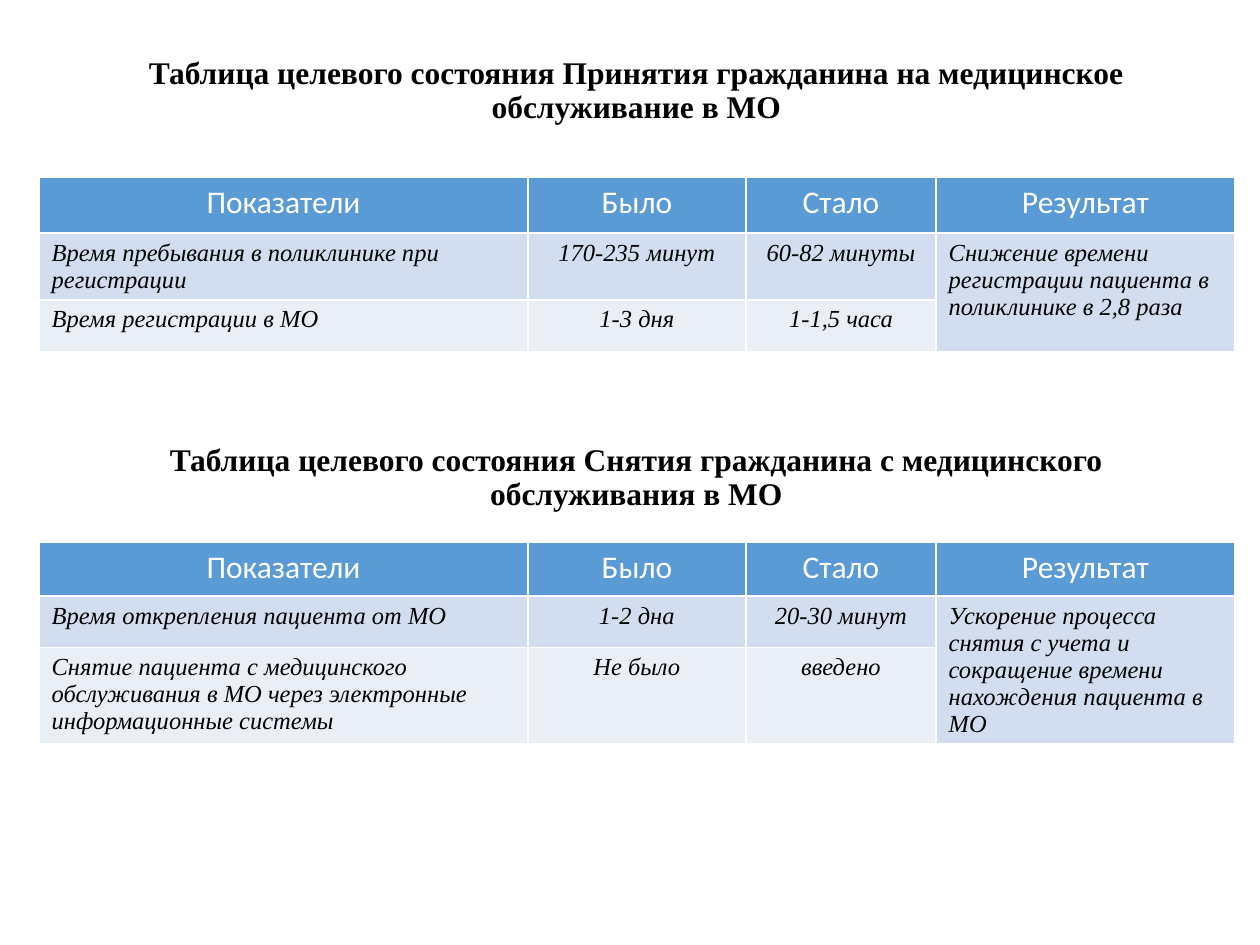
from dataclasses import dataclass

from pptx import Presentation
from pptx.dml.color import RGBColor
from pptx.enum.text import MSO_ANCHOR, MSO_AUTO_SIZE, PP_ALIGN
from pptx.util import Inches, Pt


@dataclass(frozen=True)
class Theme:
    header_fill: RGBColor = RGBColor(0x5B, 0x9B, 0xD5)
    band_fills: tuple = (RGBColor(0xD2, 0xDE, 0xEF), RGBColor(0xEA, 0xEF, 0xF7))
    header_text: RGBColor = RGBColor(0xFF, 0xFF, 0xFF)
    text: RGBColor = RGBColor(0, 0, 0)
    header_font: str = "Calibri"
    body_font: str = "Times New Roman"
    heading_size: Pt = Pt(18)
    body_size: Pt = Pt(14)


THEME = Theme()
COLUMNS = ("Показатели", "Было", "Стало", "Результат")
COLUMN_WIDTHS = (3.88, 1.73, 1.51, 2.37)
CENTERED_COLUMNS = (1, 2)
RESULT_COLUMN = 3

ADMISSION_HEADING = "Таблица целевого состояния Принятия гражданина на медицинское обслуживание в МО"
ADMISSION_ROWS = (
    ("Время пребывания в поликлинике при регистрации", "170-235 минут", "60-82 минуты"),
    ("Время регистрации в МО", "1-3 дня", "1-1,5 часа"),
)
ADMISSION_RESULT = "Снижение времени регистрации пациента в поликлинике в 2,8 раза"

REMOVAL_HEADING = "Таблица целевого состояния Снятия гражданина с медицинского обслуживания в МО"
REMOVAL_ROWS = (
    ("Время открепления пациента от МО", "1-2 дна", "20-30 минут"),
    ("Снятие пациента с медицинского обслуживания в МО через электронные информационные системы",
     "Не было", "введено"),
)
REMOVAL_RESULT = "Ускорение процесса снятия с учета и сокращение времени нахождения пациента в МО"


def add_text(frame, text, font_name, size, color, align, bold=False, italic=False):
    paragraph = frame.paragraphs[0]
    paragraph.alignment = align
    run = paragraph.add_run()
    run.text = text
    font = run.font
    font.name, font.size, font.bold, font.italic = font_name, size, bold, italic
    font.color.rgb = color
    return paragraph


def fill_heading(heading, text, left, top, width, height):
    heading.left, heading.top = Inches(left), Inches(top)
    heading.width, heading.height = Inches(width), Inches(height)
    frame = heading.text_frame
    frame.word_wrap = True
    frame.auto_size = MSO_AUTO_SIZE.NONE
    frame.vertical_anchor = MSO_ANCHOR.MIDDLE
    paragraph = add_text(frame, text, THEME.body_font, THEME.heading_size,
                         THEME.text, PP_ALIGN.CENTER, bold=True)
    paragraph.line_spacing = 0.9


def fill_cell(cell, text, fill, align, is_header=False):
    cell.fill.solid()
    cell.fill.fore_color.rgb = fill
    if is_header:
        add_text(cell.text_frame, text, THEME.header_font, THEME.heading_size,
                 THEME.header_text, align)
    elif text:
        add_text(cell.text_frame, text, THEME.body_font, THEME.body_size,
                 THEME.text, align, italic=True)


def add_indicator_table(slide, left, top, row_heights, rows, result):
    """Add a before/after table whose result cell spans all body rows."""
    table = slide.shapes.add_table(
        len(row_heights), len(COLUMNS), Inches(left), Inches(top),
        Inches(sum(COLUMN_WIDTHS)), Inches(sum(row_heights))).table
    for column, width in zip(table.columns, COLUMN_WIDTHS):
        column.width = Inches(width)
    for row, height in zip(table.rows, row_heights):
        row.height = Inches(height)

    for col, label in enumerate(COLUMNS):
        fill_cell(table.cell(0, col), label, THEME.header_fill, PP_ALIGN.CENTER, is_header=True)
    for row, values in enumerate(rows, start=1):
        for col, value in enumerate(values):
            align = PP_ALIGN.CENTER if col in CENTERED_COLUMNS else PP_ALIGN.LEFT
            fill_cell(table.cell(row, col), value, THEME.band_fills[(row - 1) % 2], align)

    result_cell = table.cell(1, RESULT_COLUMN)
    result_cell.merge(table.cell(len(rows), RESULT_COLUMN))
    fill_cell(result_cell, result, THEME.band_fills[0], PP_ALIGN.LEFT)


def main():
    presentation = Presentation()
    presentation.slide_width, presentation.slide_height = Inches(10), Inches(7.5)
    slide = presentation.slides.add_slide(presentation.slide_layouts[5])

    fill_heading(slide.shapes.title, ADMISSION_HEADING, 0.74, 0.37, 8.62, 0.71)
    add_indicator_table(slide, 0.31, 1.41, (0.44, 0.53, 0.41), ADMISSION_ROWS, ADMISSION_RESULT)

    removal_heading = slide.shapes.add_textbox(0, 0, 0, 0)
    fill_heading(removal_heading, REMOVAL_HEADING, 0.74, 3.44, 8.62, 0.71)
    add_indicator_table(slide, 0.31, 4.3, (0.43, 0.41, 0.76), REMOVAL_ROWS, REMOVAL_RESULT)

    presentation.save("out.pptx")


if __name__ == "__main__":
    main()
